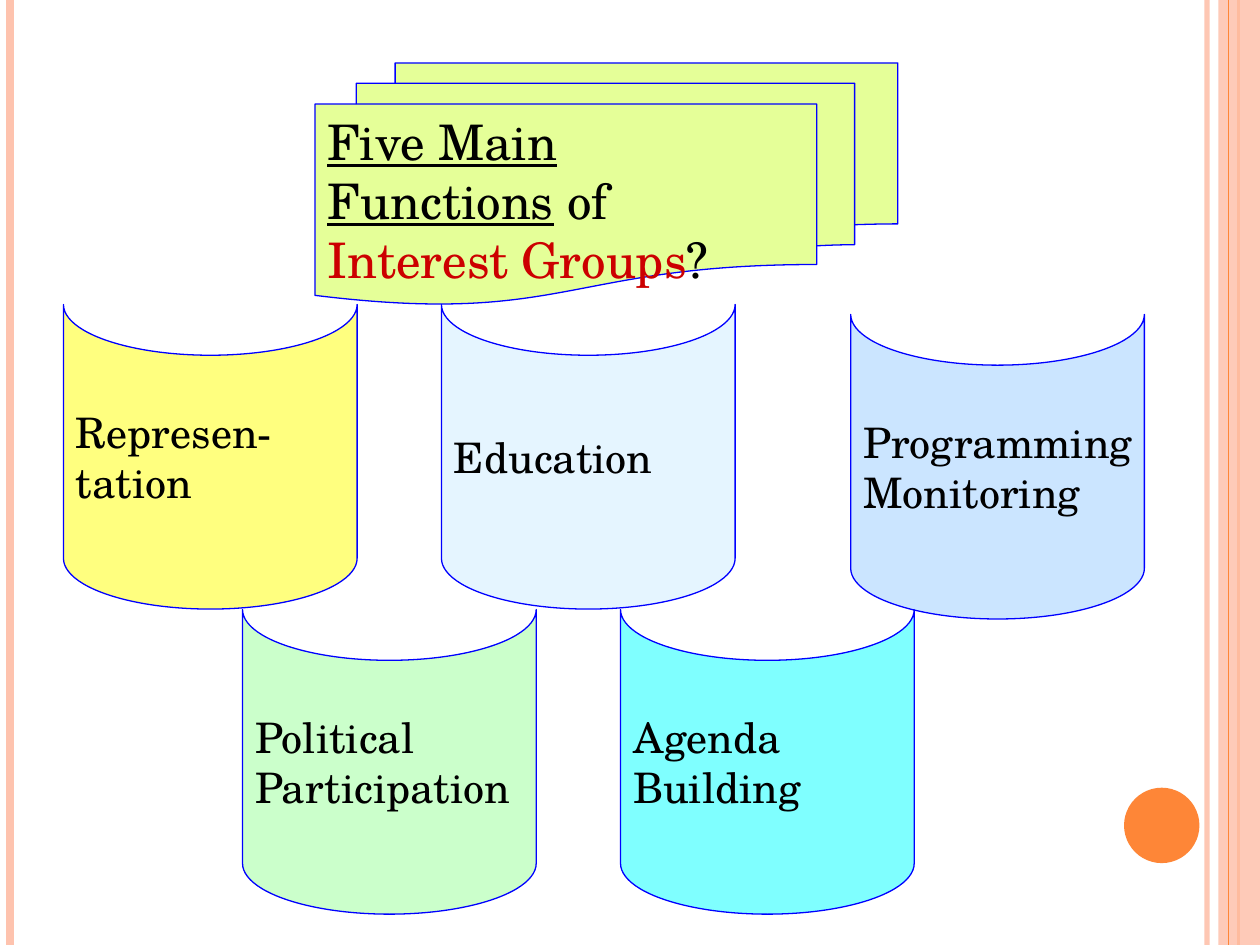
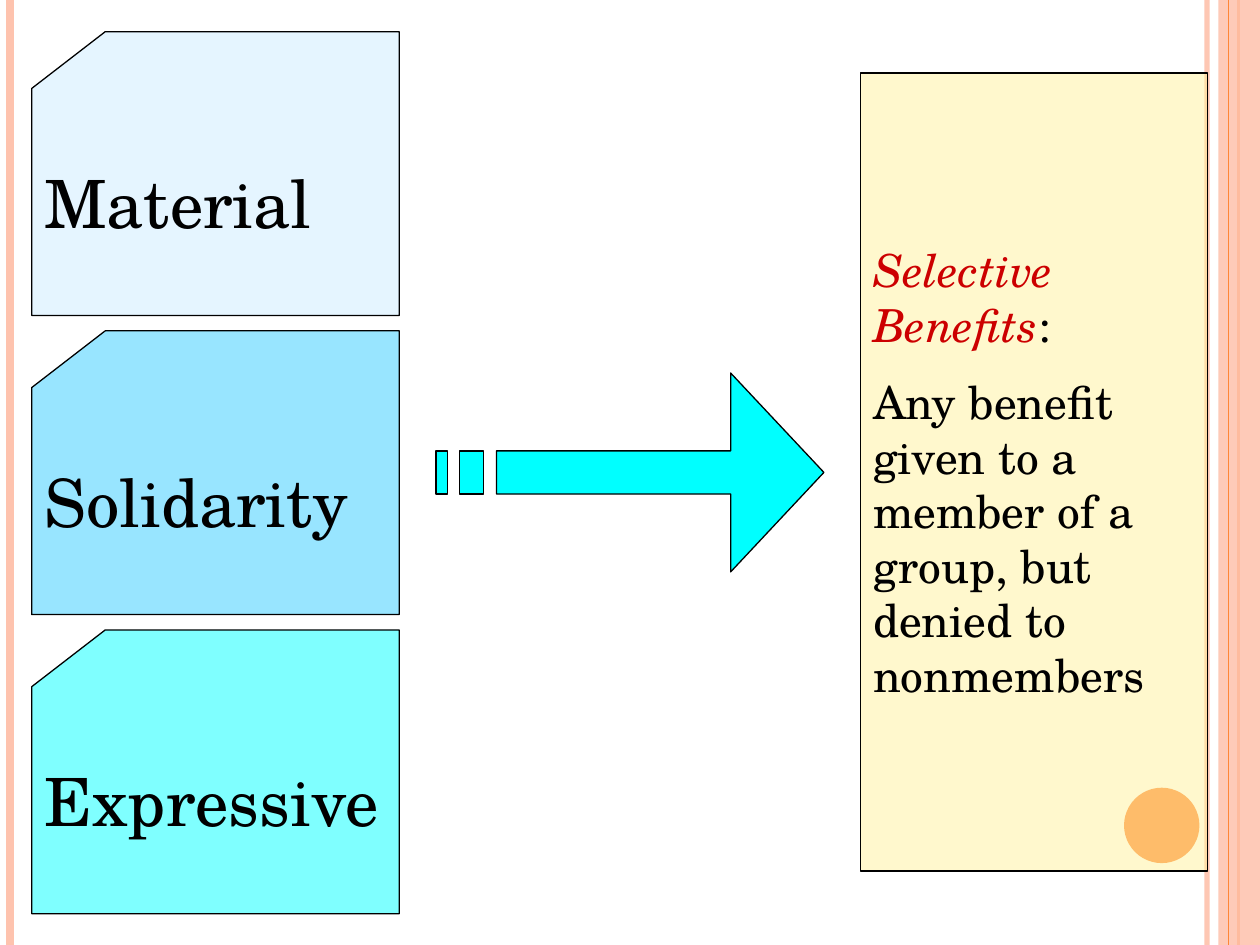
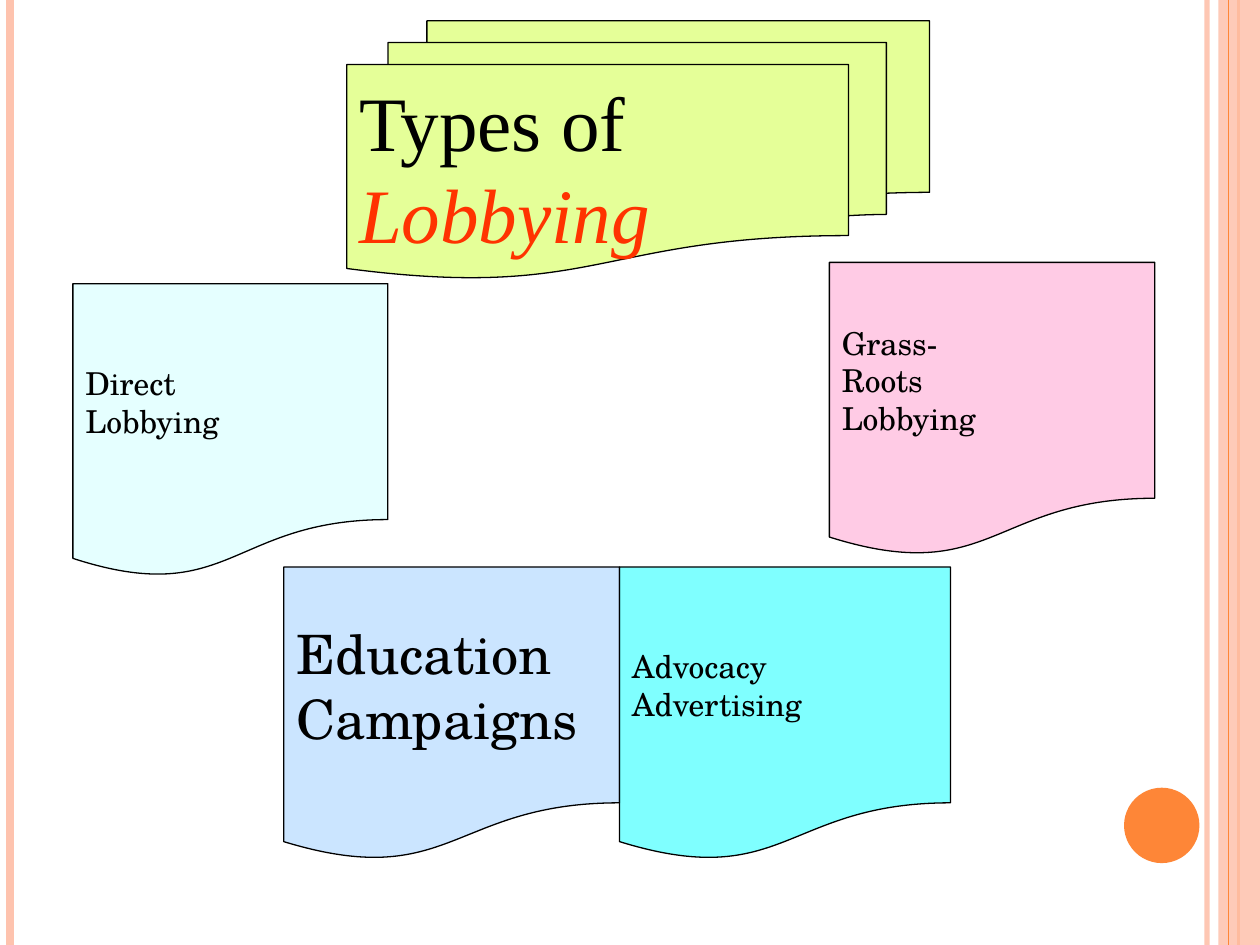
import pptx
import pptx.util
import pptx.dml.color
import pptx.enum.shapes
import pptx.enum.text
import pptx.oxml
import pptx.oxml.ns

Cm = pptx.util.Cm
Pt = pptx.util.Pt
SHAPE = pptx.enum.shapes.MSO_SHAPE
qn = pptx.oxml.ns.qn

WIDTH, HEIGHT = 25.4, 19.05
SERIF, TIMES = "TeX Gyre Schola", "Times New Roman"
BLACK, BLUE, RED = "000000", "0000FF", "CC0000"
PEACH, ORANGE = "FEC3AE", "FE8637"
LIME, AQUA, SKY, PALE_BLUE = "CCFF33", "00FFFF", "99CCFF", "CCECFF"

LEFT_RULES = [(24.33, PEACH, 3, 93), (0.2, PEACH, 4.5, 100), (24.97, ORANGE, 1.5, 100)]
BAND = (24.56, 0, 0.84, HEIGHT)
BAND_RULE = (24.77, ORANGE, 0.75, 100)
DOT = (22.66, 15.88, 1.52, 1.52)

FUNCTIONS_TITLE = [
    [("Five Main", {"underline": True})],
    [("Functions", {"underline": True}), (" of", {})],
    [("Interest Groups", {"color": RED}), ("?", {})],
]
FUNCTIONS_BOX = (6.35, 1.27, 11.75, 4.87)
DRUM_SIZE = (6.14, 5.92)
DRUMS = [
    (["Represen-tation"], "FFFF00", 1.17, 6.25, True),
    (["Political", "Participation"], "99FF99", 4.78, 12.4, False),
    (["Education"], PALE_BLUE, 8.79, 6.25, False),
    (["Agenda", "Building"], AQUA, 12.4, 12.4, False),
    (["Programming", "Monitoring"], SKY, 17.04, 6.45, False),
]

BENEFITS_BOX = (17.35, 1.47, 6.99, 16.09)
BENEFITS = [
    [("Selective Benefits", {"color": RED, "italic": True}), (":", {})],
    [("Any benefit given to a member of a group, but denied to nonmembers", {})],
]
CARDS = [("Material", PALE_BLUE), ("Solidarity", "33CCFF"), ("Expressive", AQUA)]
CARD_LEFT, CARD_TOP, CARD_PITCH = 0.64, 0.64, 6.03
CARD_SIZE = (7.41, 5.72)
ARROW_TOP, ARROW_BOTTOM = 7.52, 11.53
SHAFT_LEFT, SHAFT_TOP, SHAFT_BOTTOM = 10.01, 9.09, 9.96
HEAD_LEFT, TIP = 14.73, 16.61
STRIPES = [(9.27, 9.75), (8.79, 9.02)]

LOBBYING_TITLE = [[("Types of ", {}), ("Lobbying", {"color": "FF3300", "italic": True})]]
LOBBYING_BOX = (6.99, 0.42, 11.75, 5.19)
DOC_HEIGHT = 5.93
DOCS = [
    (["Direct", "Lobbying"], "CCFFFF", 1.47, 5.72, 6.35, 18),
    (["Education", "Campaigns"], SKY, 5.72, 11.43, 6.77, 31),
    (["Grass-", "Roots", "Lobbying"], "FF99CC", 16.72, 5.29, 6.56, 18),
    (["Advocacy", "Advertising"], AQUA, 12.49, 11.43, 6.67, 18),
]


def rgb(color):
    return pptx.dml.color.RGBColor.from_string(color)


def set_alpha(s, percent):
    if percent < 100:
        clr = next(s.element.spPr.iter(qn("a:srgbClr")))
        pptx.oxml.ns  # namespace helpers
        alpha = clr.makeelement(qn("a:alpha"), {"val": str(percent * 1000)})
        clr.append(alpha)


def paint(s, fill, alpha=100, line=None):
    s.shadow.inherit = False
    s.fill.solid()
    s.fill.fore_color.rgb = rgb(fill)
    set_alpha(s, alpha)
    if line:
        s.line.color.rgb = rgb(line)
        s.line.width = Pt(0.75)
    else:
        s.line.fill.background()


def add_box(slide, kind, box, fill, alpha=50, line=BLACK):
    s = slide.shapes.add_shape(kind, *(Cm(v) for v in box))
    paint(s, fill, alpha, line)
    return s


def add_rule(slide, x, color, width, alpha):
    s = slide.shapes.add_connector(
        pptx.enum.shapes.MSO_CONNECTOR.STRAIGHT, Cm(x), 0, Cm(x), Cm(HEIGHT))
    s.line.color.rgb = rgb(color)
    s.line.width = Pt(width)
    set_alpha(s, alpha)
    spPr = s.element.spPr
    spPr.append(spPr.makeelement(qn("a:effectLst"), {}))
    return s


def plain(lines):
    return [[(line, {})] for line in lines]


def write(s, paragraphs, size, font=SERIF, wrap=False, before=0):
    tf = s.text_frame
    tf.word_wrap = wrap
    tf.vertical_anchor = pptx.enum.text.MSO_ANCHOR.MIDDLE
    for i, runs in enumerate(paragraphs):
        p = tf.add_paragraph() if i else tf.paragraphs[0]
        p.alignment = pptx.enum.text.PP_ALIGN.LEFT
        if before:
            p.space_before = Pt(before)
        for text, style in runs:
            r = p.add_run()
            r.text = text
            r.font.name = font
            r.font.size = Pt(size)
            r.font.color.rgb = rgb(style.get("color", BLACK))
            r.font.italic = style.get("italic")
            r.font.underline = style.get("underline")


def decorate_master(prs, slide):
    parts = [add_rule(slide, *rule) for rule in LEFT_RULES]
    parts.append(add_box(slide, SHAPE.RECTANGLE, BAND, PEACH, 87, None))
    parts.append(add_rule(slide, *BAND_RULE))
    parts.append(add_box(slide, SHAPE.OVAL, DOT, ORANGE, 100, None))
    tree = prs.slide_master.element.cSld.spTree
    for number, s in enumerate(parts, 20):
        s.element[0][0].set("id", str(number))
        tree.append(s.element)


def build_functions(slide):
    s = add_box(slide, SHAPE.FLOWCHART_MULTIDOCUMENT, FUNCTIONS_BOX, LIME, line=BLUE)
    write(s, FUNCTIONS_TITLE, 28)
    for lines, fill, left, top, wrap in DRUMS:
        s = add_box(slide, SHAPE.FLOWCHART_STORED_DATA, (left, top, *DRUM_SIZE), fill, line=BLUE)
        s.rotation = 90
        for flip in ("flipH", "flipV"):
            s.element.spPr.xfrm.set(flip, "1")
        write(s, plain(lines), 24, wrap=wrap)
        s.element.txBody.bodyPr.set("vert", "eaVert")


def build_benefits(slide):
    s = add_box(slide, SHAPE.RECTANGLE, BENEFITS_BOX, "FFF39D")
    write(s, BENEFITS, 26, wrap=True, before=13)

    middle = (ARROW_TOP + ARROW_BOTTOM) / 2
    outlines = [[(HEAD_LEFT, ARROW_TOP), (HEAD_LEFT, SHAFT_TOP), (SHAFT_LEFT, SHAFT_TOP),
                 (SHAFT_LEFT, SHAFT_BOTTOM), (HEAD_LEFT, SHAFT_BOTTOM),
                 (HEAD_LEFT, ARROW_BOTTOM), (TIP, middle)]]
    outlines += [[(a, SHAFT_TOP), (a, SHAFT_BOTTOM), (b, SHAFT_BOTTOM), (b, SHAFT_TOP)]
                 for a, b in STRIPES]
    outlines = [[(Cm(x), Cm(y)) for x, y in outline] for outline in outlines]
    builder = slide.shapes.build_freeform(*outlines[0][0])
    for i, outline in enumerate(outlines):
        if i:
            builder.move_to(*outline[0])
        builder.add_line_segments(outline[1:], close=True)
    paint(builder.convert_to_shape(), AQUA, line=BLACK)

    for i, (text, fill) in enumerate(CARDS):
        box = (CARD_LEFT, CARD_TOP + i * CARD_PITCH, *CARD_SIZE)
        s = add_box(slide, SHAPE.FLOWCHART_CARD, box, fill)
        write(s, plain([text]), 38)


def build_lobbying(slide):
    for lines, fill, left, top, width, size in DOCS:
        s = add_box(slide, SHAPE.FLOWCHART_DOCUMENT, (left, top, width, DOC_HEIGHT), fill)
        write(s, plain(lines), size)
    s = add_box(slide, SHAPE.FLOWCHART_MULTIDOCUMENT, LOBBYING_BOX, LIME)
    write(s, LOBBYING_TITLE, 44, TIMES, wrap=True)


def main():
    prs = pptx.Presentation()
    prs.slide_width, prs.slide_height = Cm(WIDTH), Cm(HEIGHT)
    blank = prs.slide_layouts[6]
    for i, build in enumerate((build_functions, build_benefits, build_lobbying)):
        slide = prs.slides.add_slide(blank)
        if i == 0:
            decorate_master(prs, slide)
        build(slide)
    prs.save("out.pptx")


if __name__ == "__main__":
    main()
